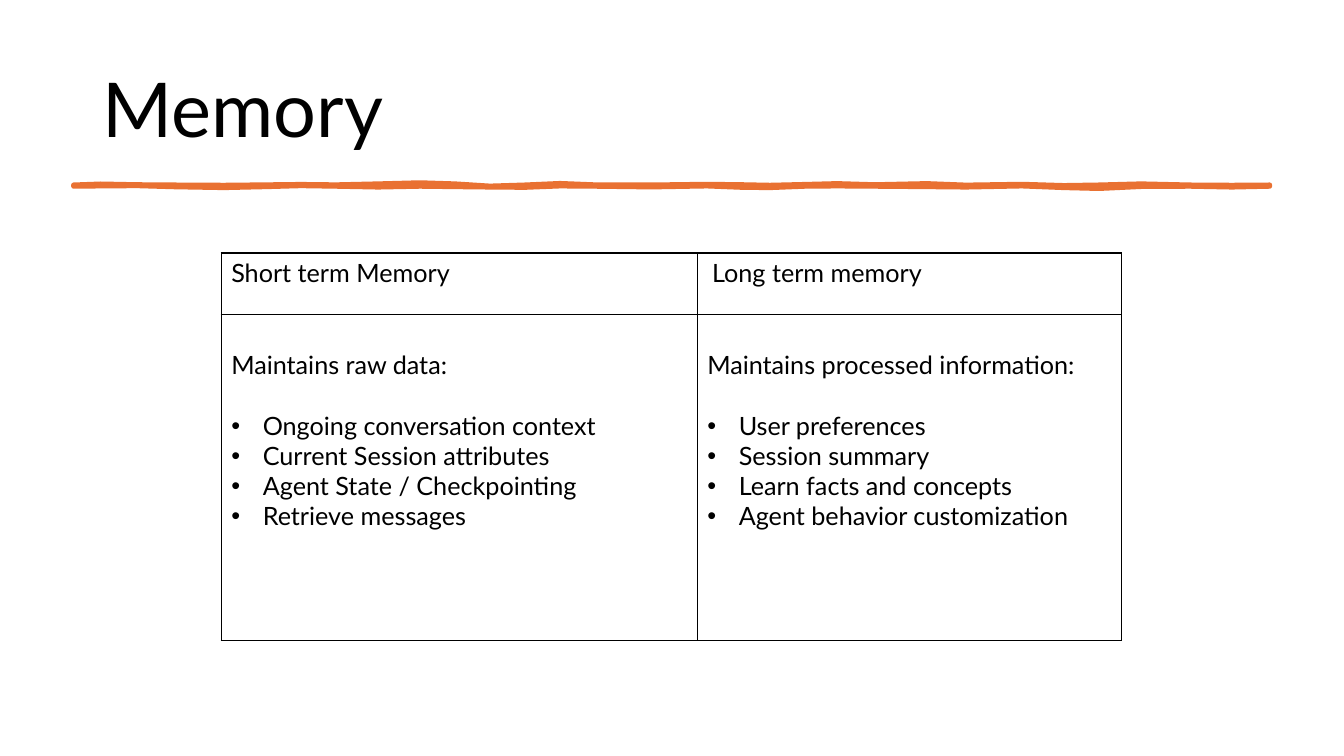
from dataclasses import dataclass

from lxml.etree import SubElement
from pptx import Presentation
from pptx.dml.color import RGBColor
from pptx.enum.text import MSO_ANCHOR, PP_ALIGN
from pptx.oxml.ns import qn
from pptx.slide import Slide
from pptx.table import _Cell as Cell
from pptx.text.text import _Paragraph as Paragraph
from pptx.util import Pt

BLACK = RGBColor(0x00, 0x00, 0x00)
ORANGE = RGBColor(0xE9, 0x71, 0x32)
FONT = "Lato"
BODY_SIZE = 18
LINE_HEIGHT = 21.6
CELL_TOP = 3.6
BULLET_INDENT = 22.5
COLUMN_HEADER, COLUMN_BODY = 0, 1


@dataclass(frozen=True)
class MemoryColumn:
    heading: str
    heading_inset: float
    intro: str
    points: tuple[str, ...]
    width: float


@dataclass(frozen=True)
class StrokeSample:
    x: float
    top: float
    bottom: float


MEMORY_COLUMNS = (
    MemoryColumn(
        "Short term Memory", 7.2, "Maintains raw data:",
        ("Ongoing conversation context", "Current Session attributes",
         "Agent State / Checkpointing", "Retrieve messages"), 340),
    MemoryColumn(
        "Long term memory", 10.7, "Maintains processed information:",
        ("User preferences", "Session summary", "Learn facts and concepts",
         "Agent behavior customization"), 303),
)
ROW_HEIGHTS = (44, 233)

BRUSH_STROKE = (
    StrokeSample(52.5, 132, 133.2), StrokeSample(72, 131.3, 133),
    StrokeSample(98, 131.8, 132.8), StrokeSample(125, 132, 133.6),
    StrokeSample(160, 132.2, 134.2), StrokeSample(190, 131.9, 133.5),
    StrokeSample(215, 131.6, 132.8), StrokeSample(240, 131.9, 133.2),
    StrokeSample(270, 131.2, 133.8), StrokeSample(300, 130.4, 133.2),
    StrokeSample(325, 131.2, 133.5), StrokeSample(350, 132.8, 133.8),
    StrokeSample(375, 132, 134), StrokeSample(400, 130.9, 133),
    StrokeSample(425, 131.9, 133.2), StrokeSample(465, 132, 133.7),
    StrokeSample(505, 131.5, 133), StrokeSample(530, 131.8, 134),
    StrokeSample(550, 132.2, 134.2), StrokeSample(575, 131.6, 133.2),
    StrokeSample(598, 131, 133), StrokeSample(625, 131.8, 133.2),
    StrokeSample(662, 131, 133.5), StrokeSample(690, 132.1, 133.8),
    StrokeSample(730, 131.5, 133), StrokeSample(760, 132.4, 134.2),
    StrokeSample(785, 132, 134.8), StrokeSample(815, 131.2, 133.4),
    StrokeSample(850, 132, 133.2), StrokeSample(880, 132.2, 133.8),
    StrokeSample(907, 132, 133.2),
)


def style_paragraph(para: Paragraph, size: float) -> None:
    para.alignment = PP_ALIGN.LEFT
    for span in para.runs:
        span.font.name = FONT
        span.font.size = Pt(size)
        span.font.color.rgb = BLACK


def add_bullet(para: Paragraph) -> None:
    properties = para._p.get_or_add_pPr()
    properties.set("marL", str(Pt(BULLET_INDENT)))
    properties.set("indent", str(-Pt(BULLET_INDENT)))
    SubElement(properties, qn("a:buFont"), typeface="Arial")
    SubElement(properties, qn("a:buChar"), char="•")


def frame_cell(cell: Cell) -> None:
    properties = cell._tc.get_or_add_tcPr()
    for side in ("a:lnL", "a:lnR", "a:lnT", "a:lnB"):
        border = SubElement(properties, qn(side), w=str(Pt(1)))
        fill = SubElement(border, qn("a:solidFill"))
        SubElement(fill, qn("a:srgbClr"), val=str(BLACK))
    cell.fill.background()


def fill_cell(cell: Cell, lines: tuple[str, ...]) -> list[Paragraph]:
    frame_cell(cell)
    cell.text_frame.text = "\n".join(lines)
    paragraphs = list(cell.text_frame.paragraphs)
    for para in paragraphs:
        style_paragraph(para, BODY_SIZE)
    return paragraphs


def draw_title(page: Slide) -> None:
    box = page.shapes.add_textbox(Pt(66.2), Pt(28.8), Pt(828), Pt(104.4))
    frame = box.text_frame
    frame.word_wrap = True
    frame.vertical_anchor = MSO_ANCHOR.MIDDLE
    frame.text = "Memory"
    para = frame.paragraphs[0]
    para.line_spacing = 0.9
    style_paragraph(para, 54)


def draw_brush_stroke(page: Slide) -> None:
    upper = [(Pt(sample.x), Pt(sample.top)) for sample in BRUSH_STROKE]
    lower = [(Pt(sample.x), Pt(sample.bottom)) for sample in reversed(BRUSH_STROKE)]
    builder = page.shapes.build_freeform(*upper[0])
    builder.add_line_segments(upper[1:] + lower, close=True)
    stroke = builder.convert_to_shape()
    stroke.shadow.inherit = False
    stroke.fill.solid()
    stroke.fill.fore_color.rgb = ORANGE
    stroke.line.color.rgb = ORANGE
    stroke.line.width = Pt(3.25)


def draw_memory_table(page: Slide) -> None:
    width = sum(column.width for column in MEMORY_COLUMNS)
    table = page.shapes.add_table(
        len(ROW_HEIGHTS), len(MEMORY_COLUMNS),
        Pt(158), Pt(180.7), Pt(width), Pt(sum(ROW_HEIGHTS))).table
    table.first_row = False
    table.horz_banding = False
    for row, height in zip(table.rows, ROW_HEIGHTS):
        row.height = Pt(height)
    for index, column in enumerate(MEMORY_COLUMNS):
        table.columns[index].width = Pt(column.width)
        header = table.cell(COLUMN_HEADER, index)
        fill_cell(header, (column.heading,))
        header.margin_left = Pt(column.heading_inset)
        body = table.cell(COLUMN_BODY, index)
        intro, *points = fill_cell(body, (column.intro, *column.points))
        body.margin_top = Pt(CELL_TOP + LINE_HEIGHT)
        intro.space_after = Pt(LINE_HEIGHT)
        for para in points:
            add_bullet(para)


def main() -> None:
    deck = Presentation()
    deck.slide_width, deck.slide_height = Pt(960), Pt(540)
    page = deck.slides.add_slide(deck.slide_layouts[6])
    draw_title(page)
    draw_brush_stroke(page)
    draw_memory_table(page)
    deck.save("out.pptx")


if __name__ == "__main__":
    main()
